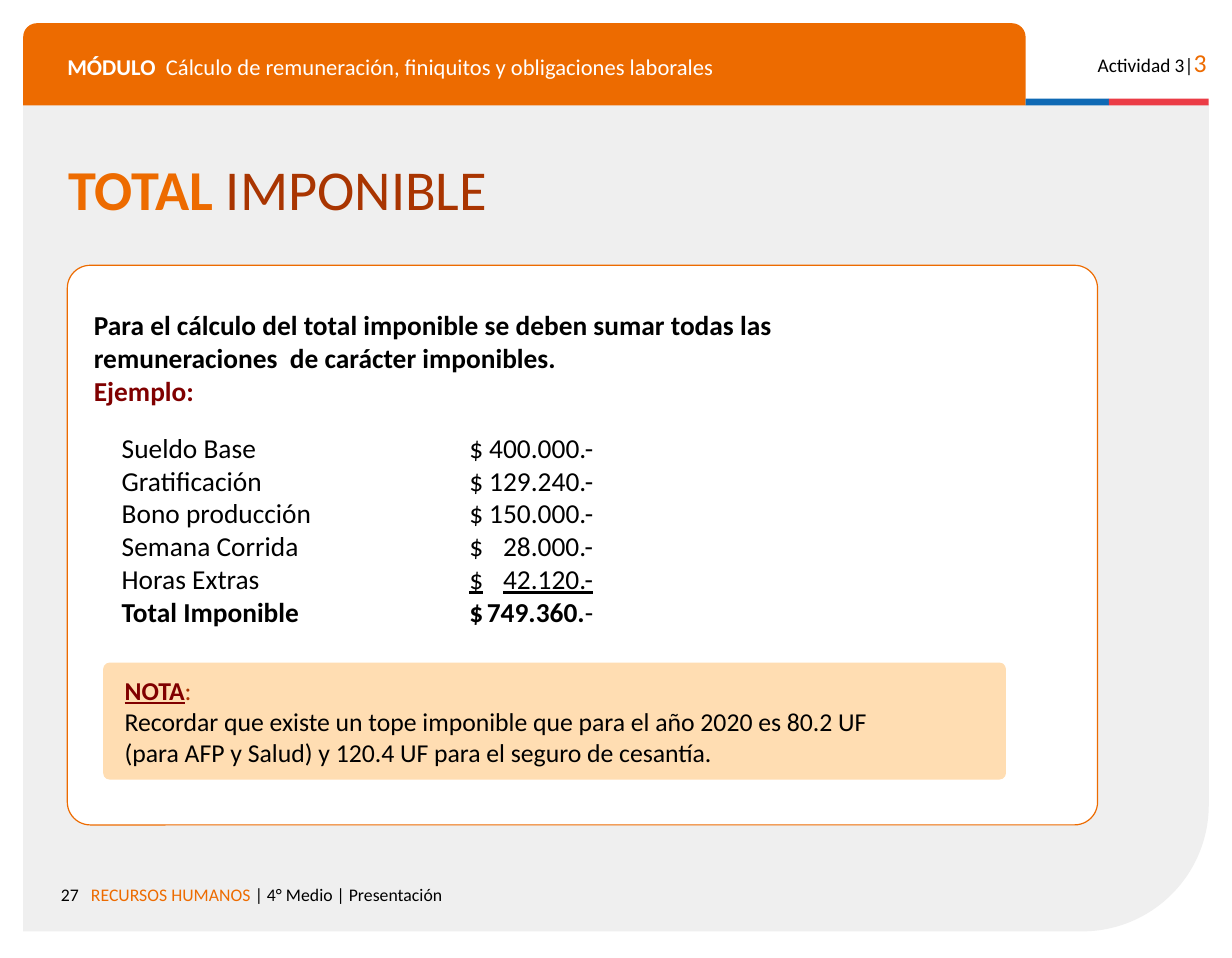
from lxml import etree
from pptx import Presentation
from pptx.dml.color import RGBColor
from pptx.enum.shapes import MSO_SHAPE as SHAPE
from pptx.enum.text import MSO_ANCHOR as ANCHOR, PP_ALIGN as ALIGN
from pptx.oxml.ns import qn
from pptx.util import Pt

BLACK = RGBColor(0, 0, 0)
WHITE = RGBColor(255, 255, 255)
GREY = RGBColor(0xEF, 0xEF, 0xEF)
ORANGE = RGBColor(0xED, 0x6B, 0x00)
RUST = RGBColor(0xA9, 0x35, 0x01)
MAROON = RGBColor(0x80, 0, 0)
PEACH = RGBColor(0xFF, 0xDD, 0xB2)
BLUE = RGBColor(0x0F, 0x69, 0xB4)
RED = RGBColor(0xEB, 0x3C, 0x46)

PAY_LINES = [
    ("Sueldo Base", "400.000.-"),
    ("Gratificación", "129.240.-"),
    ("Bono producción", "150.000.-"),
    ("Semana Corrida", "28.000.-"),
]


def run(text, size, color=BLACK, bold=False, underline=False):
    return text, size, color, bold, underline


def fill_text(frame, lines, align=ALIGN.LEFT, spacing=None):
    frame.word_wrap = True
    frame.margin_left = frame.margin_right = 0
    frame.margin_top = frame.margin_bottom = 0
    for index, line in enumerate(lines):
        paragraph = frame.paragraphs[0] if index == 0 else frame.add_paragraph()
        paragraph.alignment = align
        paragraph.line_spacing = spacing
        for text, size, color, bold, underline in line:
            piece = paragraph.add_run()
            piece.text = text
            font = piece.font
            font.name, font.size = "Calibri", Pt(size)
            font.bold, font.underline = bold, underline
            font.color.rgb = color


def add_text(slide, left, top, width, height, lines, **layout):
    box = slide.shapes.add_textbox(Pt(left), Pt(top), Pt(width), Pt(height))
    fill_text(box.text_frame, lines, **layout)
    return box.text_frame


def add_panel(slide, kind, left, top, width, height, color, corners=(), border=None):
    panel = slide.shapes.add_shape(kind, Pt(left), Pt(top), Pt(width), Pt(height))
    panel.shadow.inherit = False
    panel.fill.solid()
    panel.fill.fore_color.rgb = color
    for index, corner in enumerate(corners):
        panel.adjustments[index] = corner
    if border is None:
        panel.line.fill.background()
    else:
        panel.line.color.rgb = border
        panel.line.width = Pt(0.75)
    return panel


def set_tabs(frame, stops):
    for paragraph in frame.paragraphs:
        tabs = etree.SubElement(paragraph._p.get_or_add_pPr(), qn("a:tabLst"))
        for position, align in stops:
            etree.SubElement(tabs, qn("a:tab"), pos=str(Pt(position)), algn=align)


def add_frame(slide):
    backdrop = add_panel(slide, SHAPE.ROUND_1_RECTANGLE, 14.4, 64.8, 736.6, 514.1,
                         GREY, [0.153])
    backdrop._element.spPr.find(qn("a:xfrm")).set("flipV", "1")
    add_panel(slide, SHAPE.ROUND_2_SAME_RECTANGLE, 14.4, 14.4, 622.8, 51.1,
              ORANGE, [0.167, 0])
    add_panel(slide, SHAPE.RECTANGLE, 637.2, 61.3, 51.8, 4.2, BLUE)
    add_panel(slide, SHAPE.RECTANGLE, 689, 61.3, 62, 4.2, RED)
    add_text(slide, 41.8, 34.6, 570, 20, [[
        run("MÓDULO  ", 14, WHITE, bold=True),
        run("Cálculo de remuneración, finiquitos y obligaciones laborales", 14, WHITE),
    ]], spacing=0.9)
    add_text(slide, 660, 28.8, 89.6, 22,
             [[run("Actividad 3|", 12), run("3", 16, ORANGE)]], align=ALIGN.RIGHT)
    add_text(slide, 20, 549.4, 29, 16, [[run("27", 11)]], align=ALIGN.RIGHT)
    add_text(slide, 56.5, 549.4, 500, 16, [[
        run("RECURSOS HUMANOS ", 11, ORANGE),
        run("| 4° Medio | Presentación", 11),
    ]])


def add_pay_example(slide):
    lines = [[run(f"{concept}\t$\t{amount}", 17)] for concept, amount in PAY_LINES]
    lines.append([run("Horas Extras\t", 17), run("$\t42.120.-", 17, underline=True)])
    lines.append([run("Total Imponible\t$\t749.360.", 17, bold=True), run("-", 17)])
    frame = add_text(slide, 75.6, 267.8, 370, 125, lines)
    set_tabs(frame, [(216, "l"), (293, "r")])


def add_note(slide):
    note = add_panel(slide, SHAPE.ROUNDED_RECTANGLE, 64.1, 411.8, 560.9, 72.7,
                     PEACH, [0.055])
    frame = note.text_frame
    fill_text(frame, [
        [run("NOTA", 16, MAROON, bold=True, underline=True), run(":", 16, RUST)],
        [run("Recordar que existe un tope imponible que para el año 2020 es 80.2 UF", 16)],
        [run("(para AFP y Salud) y 120.4 UF para el seguro de cesantía.", 16)],
    ])
    frame.margin_left = Pt(12.2)
    frame.vertical_anchor = ANCHOR.MIDDLE


def main():
    deck = Presentation()
    deck.slide_width, deck.slide_height = Pt(765.4), Pt(595.4)
    slide = deck.slides.add_slide(deck.slide_layouts[6])
    add_frame(slide)
    add_text(slide, 42.5, 95.8, 680, 44, [[
        run("TOTAL ", 35, ORANGE, bold=True),
        run("IMPONIBLE", 35, RUST),
    ]])
    add_panel(slide, SHAPE.ROUNDED_RECTANGLE, 41.8, 164.9, 640.1, 347.8,
              WHITE, [0.041], ORANGE)
    add_text(slide, 58.3, 191.4, 567, 63, [
        [run("Para el cálculo del total imponible se deben sumar todas las", 17, bold=True)],
        [run("remuneraciones  de carácter imponibles.", 17, bold=True)],
        [run("Ejemplo:", 17, MAROON, bold=True)],
    ])
    add_pay_example(slide)
    add_note(slide)
    deck.save("out.pptx")


if __name__ == "__main__":
    main()
